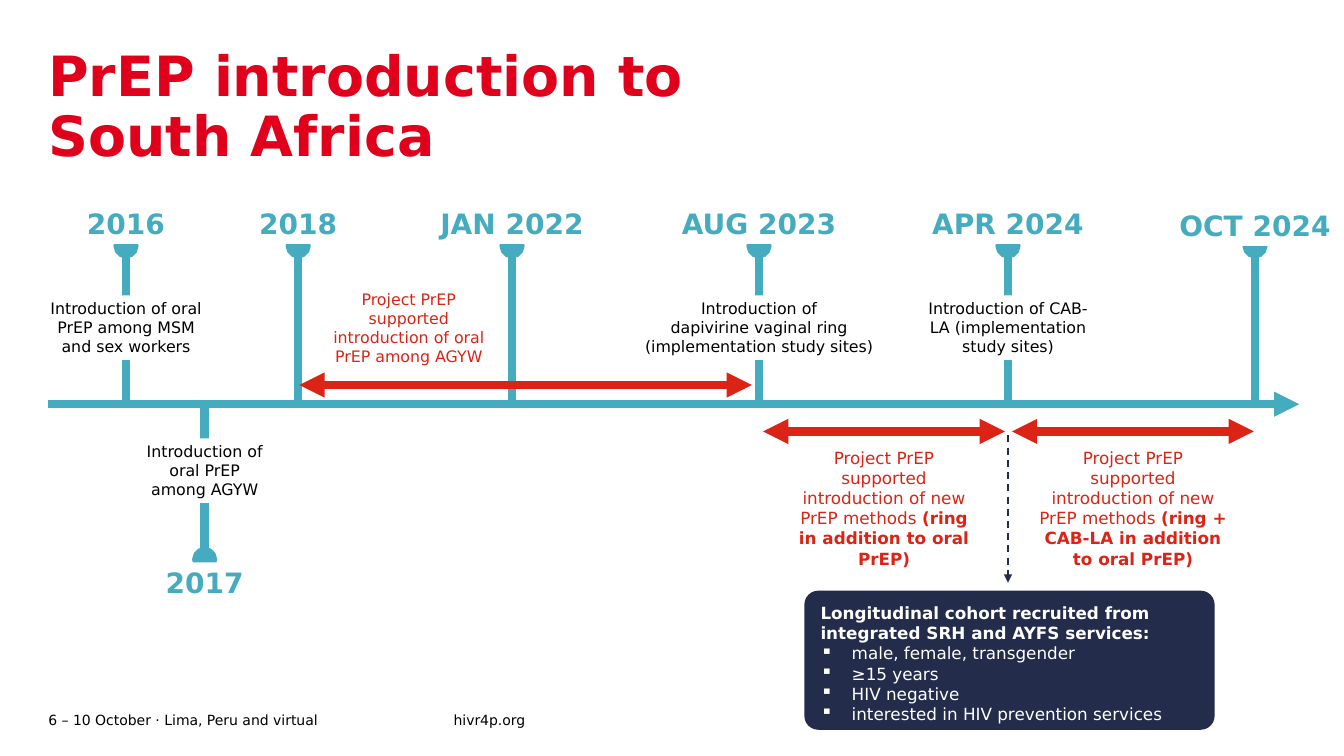
"""Build the slide with the timeline of PrEP introduction to South Africa."""

from dataclasses import dataclass

import pptx
import pptx.dml.color
import pptx.enum.dml
import pptx.enum.shapes
import pptx.enum.text
import pptx.oxml
import pptx.oxml.ns
import pptx.shapes.autoshape
import pptx.shapes.connector
import pptx.shapes.shapetree
import pptx.slide
import pptx.text.text
import pptx.util

RGBColor = pptx.dml.color.RGBColor
TEAL = RGBColor(0x45, 0xAB, 0xBF)
RED = RGBColor(0xDB, 0x24, 0x15)
TITLE_RED = RGBColor(0xE0, 0x00, 0x1B)
NAVY = RGBColor(0x24, 0x2C, 0x4B)
BLACK = RGBColor(0, 0, 0)
WHITE = RGBColor(255, 255, 255)

FONT = "DejaVu Sans"
COLUMNS, ROWS = 160, 90
SLIDE_WIDTH, SLIDE_HEIGHT = pptx.util.Inches(13.333), pptx.util.Inches(7.5)
MARGIN = 5.76
AXIS_ROW = 48.12
YEAR_WIDTH, YEAR_HEIGHT = 21.36, 4.8
LABEL_INSETS = (0.07, 0.03, 0.07, 0.03)
NO_INSETS = (0, 0, 0, 0)
CENTER = pptx.enum.text.PP_ALIGN.CENTER
Shapes = pptx.shapes.shapetree.GroupShapes | pptx.shapes.shapetree.SlideShapes


@dataclass(frozen=True)
class Box:
    left: float
    top: float
    width: float
    height: float


@dataclass(frozen=True)
class Milestone:
    year: str
    column: float
    note: str = ""
    note_width: float = 0
    year_top: float = 24.24
    stem_start: float = 47.88
    stem_end: float = 29.28
    note_top: float = 35.16


@dataclass(frozen=True)
class Span:
    start: float
    end: float
    row: float
    caption: Box
    size: float
    text: str
    bold_text: str = ""


MILESTONES = [
    Milestone("2016", 15, "Introduction of oral PrEP among MSM and sex workers", 20.28),
    Milestone("2018", 35.5),
    Milestone("2017", 24.36, "Introduction of oral PrEP among AGYW", 16.56,
              year_top=66.96, stem_start=AXIS_ROW, stem_end=66.6, note_top=52.2),
    Milestone("JAN 2022", 60.96),
    Milestone("AUG 2023", 90.36,
              "Introduction of\ndapivirine vaginal ring\n(implementation study sites)", 29.28),
    Milestone("APR 2024", 120, "Introduction of CAB-LA (implementation study sites)", 21.24),
    Milestone("OCT 2024", 149.4, year_top=24.48),
]
NEW_METHODS = "Project PrEP supported introduction of new PrEP methods "
SPANS = [
    Span(35.64, 89.52, 45.84, Box(37.56, 34.08, 22.2, 9.96), 11.3,
         "Project PrEP supported introduction of oral PrEP among AGYW"),
    Span(90.84, 119.64, 51.36, Box(93.12, 52.92, 24.24, 15.36), 12,
         NEW_METHODS, "(ring in addition to oral PrEP)"),
    Span(120.48, 149.28, 51.36, Box(122.76, 52.92, 24.24, 15.36), 12,
         NEW_METHODS, "(ring + CAB-LA in addition to oral PrEP)"),
]
FOOTERS = {
    "6 – 10 October · Lima, Peru and virtual": Box(MARGIN, 84.24, 48.24, 2.88),
    "hivr4p.org": Box(54, 84.24, 23.16, 2.88),
}
COHORT_BOX = Box(95.76, 70.32, 48.84, 16.56)
COHORT_HEADING = "Longitudinal cohort recruited from integrated SRH and AYFS services:"
COHORT_CRITERIA = ["male, female, transgender", "≥15 years", "HIV negative",
                   "interested in HIV prevention services"]


def across(columns: float) -> int:
    return round(SLIDE_WIDTH * columns / COLUMNS)


def down(rows: float) -> int:
    return round(SLIDE_HEIGHT * rows / ROWS)


def place(box: Box) -> tuple[int, int, int, int]:
    return across(box.left), down(box.top), across(box.width), down(box.height)


def format_runs(paragraph: pptx.text.text._Paragraph, size: float, color: RGBColor,
                bold: bool = False) -> None:
    for run in paragraph.runs:
        run.font.name = FONT
        run.font.size = pptx.util.Pt(size)
        run.font.color.rgb = color
        run.font.bold = bold


def set_frame(frame: pptx.text.text.TextFrame, insets: tuple[float, ...]) -> None:
    frame.word_wrap = True
    frame.vertical_anchor = pptx.enum.text.MSO_ANCHOR.TOP
    frame.auto_size = pptx.enum.text.MSO_AUTO_SIZE.NONE
    (frame.margin_left, frame.margin_top,
     frame.margin_right, frame.margin_bottom) = map(pptx.util.Inches, insets)


def add_panel(shapes: Shapes, box: Box, fill: RGBColor, insets: tuple[float, ...],
              rounded: bool = False) -> pptx.shapes.autoshape.Shape:
    kinds = pptx.enum.shapes.MSO_SHAPE
    shape = shapes.add_shape(kinds.ROUNDED_RECTANGLE if rounded else kinds.RECTANGLE, *place(box))
    shape.shadow.inherit = False
    shape.fill.solid()
    shape.fill.fore_color.rgb = fill
    shape.line.fill.background()
    set_frame(shape.text_frame, insets)
    return shape


def add_label(shapes: Shapes, box: Box, text: str, size: float, color: RGBColor,
              bold: bool = False, bold_text: str = "") -> None:
    frame = add_panel(shapes, box, WHITE, LABEL_INSETS).text_frame
    frame.auto_size = pptx.enum.text.MSO_AUTO_SIZE.SHAPE_TO_FIT_TEXT
    frame.text = text
    if bold_text:
        frame.paragraphs[-1].add_run().text = bold_text
    for paragraph in frame.paragraphs:
        paragraph.alignment = CENTER
        format_runs(paragraph, size, color, bold)
    if bold_text:
        frame.paragraphs[-1].runs[-1].font.bold = True


def add_line(shapes: Shapes, start: tuple[float, float], end: tuple[float, float],
             color: RGBColor, tail: str, head: str = "none",
             width: float = 6) -> pptx.shapes.connector.Connector:
    connector = shapes.add_connector(
        pptx.enum.shapes.MSO_CONNECTOR.STRAIGHT,
        across(start[0]), down(start[1]), across(end[0]), down(end[1]))
    connector.line.color.rgb = color
    connector.line.width = pptx.util.Pt(width)
    properties = connector._element.spPr
    outline = properties.find(pptx.oxml.ns.qn("a:ln"))
    for tag, kind in (("a:headEnd", head), ("a:tailEnd", tail)):
        outline.append(pptx.oxml.parse_xml(
            f'<{tag} {pptx.oxml.ns.nsdecls("a")} type="{kind}"/>'))
    properties.append(pptx.oxml.parse_xml(f'<a:effectLst {pptx.oxml.ns.nsdecls("a")}/>'))
    return connector


def add_milestone(slide: pptx.slide.Slide, item: Milestone) -> None:
    shapes = slide.shapes.add_group_shape().shapes
    add_line(shapes, (item.column, item.stem_start), (item.column, item.stem_end), TEAL, "oval")
    if item.note:
        note_box = Box(item.column - item.note_width / 2, item.note_top, item.note_width, 7.68)
        add_label(shapes, note_box, item.note, 11.3, BLACK)
    year_box = Box(item.column - YEAR_WIDTH / 2, item.year_top, YEAR_WIDTH, YEAR_HEIGHT)
    add_label(shapes, year_box, item.year, 20, TEAL, bold=True)


def add_span(slide: pptx.slide.Slide, span: Span) -> None:
    add_label(slide.shapes, span.caption, span.text, span.size, RED, bold_text=span.bold_text)
    add_line(slide.shapes, (span.start, span.row), (span.end, span.row), RED,
             "triangle", "triangle")


def add_cohort(slide: pptx.slide.Slide) -> None:
    shape = add_panel(slide.shapes, COHORT_BOX, NAVY, (0.12, 0.08, 0.12, 0.12), rounded=True)
    shape.adjustments[0] = 0.1
    shape.text_frame.text = "\n".join([COHORT_HEADING, *COHORT_CRITERIA])
    indent = pptx.util.Inches(0.31)
    for index, paragraph in enumerate(shape.text_frame.paragraphs):
        paragraph.alignment = pptx.enum.text.PP_ALIGN.LEFT
        if index:
            properties = paragraph._p.get_or_add_pPr()
            properties.set("marL", str(indent))
            properties.set("indent", str(-indent))
            properties.append(pptx.oxml.parse_xml(
                f'<a:buChar {pptx.oxml.ns.nsdecls("a")} char="▪"/>'))
        format_runs(paragraph, 12, WHITE, bold=index == 0)
    arrow = add_line(slide.shapes, (120, 51.84), (120, 69.36), NAVY, "triangle", width=1.25)
    arrow.line.dash_style = pptx.enum.dml.MSO_LINE.DASH


def add_title(slide: pptx.slide.Slide) -> None:
    title = slide.shapes.title
    title.left, title.top, title.width, title.height = place(Box(MARGIN, MARGIN, 113.4, 12.72))
    set_frame(title.text_frame, NO_INSETS)
    title.text_frame.text = "PrEP introduction to\vSouth Africa"
    paragraph = title.text_frame.paragraphs[0]
    paragraph.alignment = pptx.enum.text.PP_ALIGN.LEFT
    paragraph.line_spacing = 0.9
    format_runs(paragraph, 39.6, TITLE_RED, bold=True)


def add_footer(slide: pptx.slide.Slide, text: str, box: Box) -> None:
    frame = slide.shapes.add_textbox(*place(box)).text_frame
    set_frame(frame, NO_INSETS)
    frame.vertical_anchor = pptx.enum.text.MSO_ANCHOR.MIDDLE
    frame.text = text
    format_runs(frame.paragraphs[0], 10, BLACK)


def main() -> None:
    presentation = pptx.Presentation()
    presentation.slide_width, presentation.slide_height = SLIDE_WIDTH, SLIDE_HEIGHT
    slide = presentation.slides.add_slide(presentation.slide_layouts.get_by_name("Title Only"))
    add_title(slide)
    for text, box in FOOTERS.items():
        add_footer(slide, text, box)
    add_line(slide.shapes, (MARGIN, AXIS_ROW), (154.68, AXIS_ROW), TEAL, "triangle")
    for milestone in MILESTONES:
        add_milestone(slide, milestone)
    for span in SPANS:
        add_span(slide, span)
    add_cohort(slide)
    presentation.save("out.pptx")


if __name__ == "__main__":
    main()
